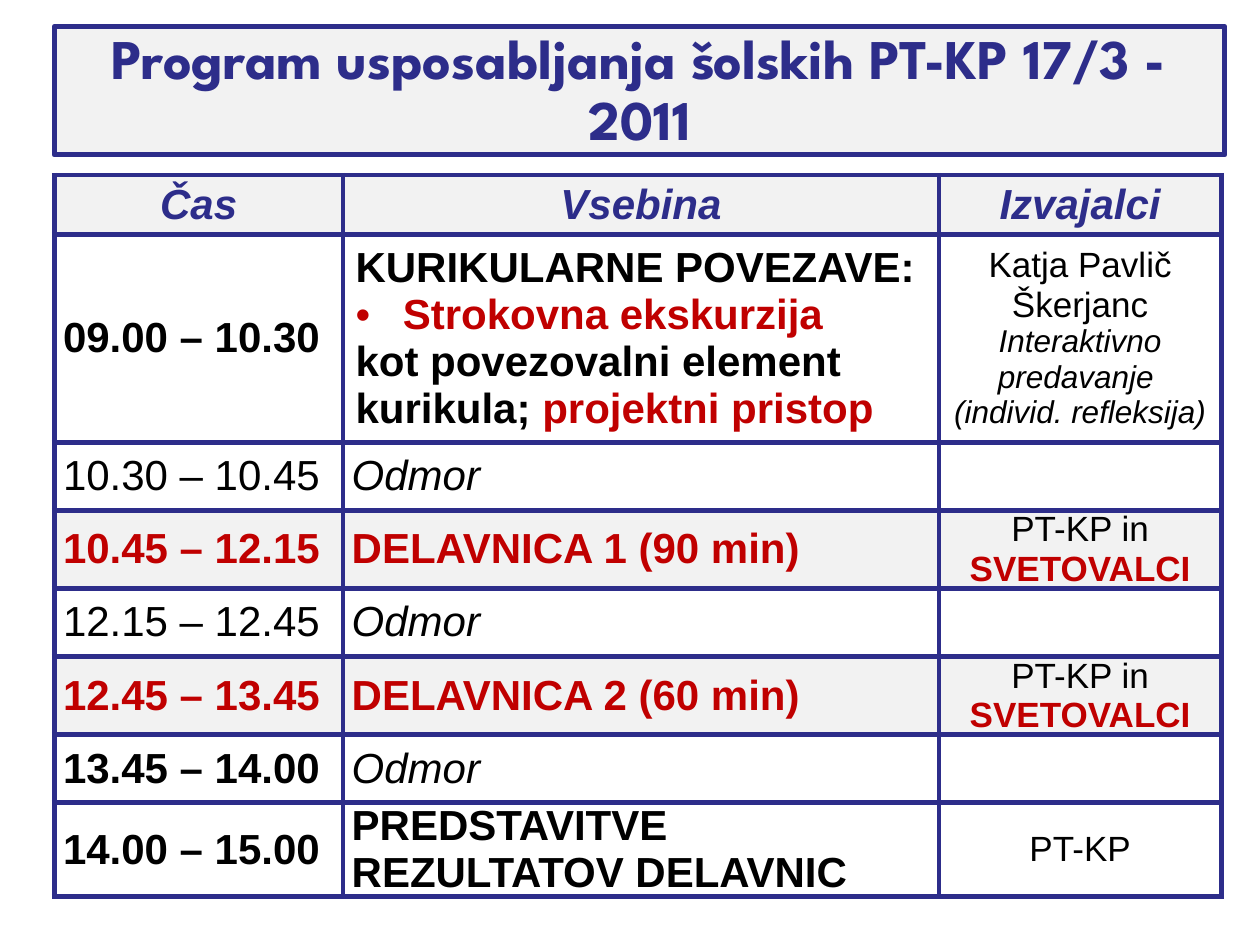
from dataclasses import dataclass
from typing import Any

from lxml.etree import SubElement as Sub
from pptx import Presentation
from pptx.dml.color import RGBColor as Rgb
from pptx.enum.shapes import MSO_SHAPE as Kind
from pptx.enum.text import MSO_ANCHOR as Anchor, PP_ALIGN as Align
from pptx.oxml import parse_xml as to_xml
from pptx.oxml.ns import nsdecls, qn
from pptx.util import Pt

NAVY, RED, BLACK = "2D2D8A", "C00000", "000000"
GREY, WHITE = "F2F2F2", "FFFFFF"


@dataclass
class Run:
    text: str
    size: float = 24
    color: str = BLACK
    bold: bool = False
    italic: bool = False
    name: str = "Arial"


@dataclass
class Para:
    runs: list[Run]
    align: Any = Align.LEFT
    dot: bool = False


@dataclass
class Cell:
    paras: list[Para]
    inset: float = 5


@dataclass
class Row:
    high: float
    cells: list[Cell]
    fill: str = WHITE


def paint(hue: str) -> Rgb:
    return Rgb.from_string(hue)


def add_runs(para: Any, runs: list[Run]) -> None:
    for item in runs:
        run = para.add_run()
        run.text = item.text
        form = {"size": Pt(item.size), "bold": item.bold,
                "italic": item.italic, "name": item.name}
        for key, value in form.items():
            setattr(run.font, key, value)
        run.font.color.rgb = paint(item.color)


def add_dot(para: Any) -> None:
    props = para._p.get_or_add_pPr()
    props.set("marL", str(Pt(27)))
    props.set("indent", str(-Pt(27)))
    Sub(props, qn("a:buFont"), typeface="Arial")
    Sub(props, qn("a:buChar"), char="•")


def add_edges(cell: Any) -> None:
    props = cell._tc.get_or_add_tcPr()
    for spot, side in enumerate("LRTB"):
        props.insert(spot, to_xml(
            f'<a:ln{side} {nsdecls("a")} w="{Pt(3)}"><a:solidFill>'
            f'<a:srgbClr val="{NAVY}"/></a:solidFill></a:ln{side}>'))


def fill_cell(cell: Any, data: Cell, hue: str) -> None:
    form = {"margin_left": Pt(data.inset), "margin_right": Pt(data.inset),
            "margin_top": Pt(0), "margin_bottom": Pt(0),
            "vertical_anchor": Anchor.MIDDLE}
    for key, value in form.items():
        setattr(cell, key, value)
    cell.fill.solid()
    cell.fill.fore_color.rgb = paint(hue)
    add_edges(cell)
    frame = cell.text_frame
    for spot, item in enumerate(data.paras):
        para = frame.add_paragraph() if spot else frame.paragraphs[0]
        para.alignment = item.align
        if item.dot:
            add_dot(para)
        add_runs(para, item.runs)


def add_title(slide: Any, text: str) -> None:
    box = slide.shapes.add_shape(Kind.RECTANGLE, Pt(31), Pt(15.1), Pt(668.9), Pt(73.4))
    box.shadow.inherit = False
    box.fill.solid()
    box.fill.fore_color.rgb = paint(GREY)
    box.line.color.rgb = paint(NAVY)
    box.line.width = Pt(3)
    frame = box.text_frame
    frame.word_wrap = True
    frame.vertical_anchor = Anchor.MIDDLE
    para = frame.paragraphs[0]
    para.alignment = Align.CENTER
    para.line_spacing = Pt(35)
    add_runs(para, [Run(text, 32, NAVY, True, name="League Spartan")])


def add_plan(slide: Any, rows: list[Row], wides: list[float]) -> None:
    high = sum(row.high for row in rows)
    grid = slide.shapes.add_table(len(rows), len(wides), Pt(31), Pt(100.1),
                                  Pt(sum(wides)), Pt(high)).table
    grid.first_row = grid.horz_banding = False
    for col, wide in zip(grid.columns, wides):
        col.width = Pt(wide)
    for spot, row in enumerate(rows):
        grid.rows[spot].height = Pt(row.high)
        for col, data in enumerate(row.cells):
            fill_cell(grid.cell(spot, col), data, row.fill)


def left(text: str, **form: Any) -> Cell:
    return Cell([Para([Run(text, **form)])])


def mid(*runs: Run) -> Para:
    return Para(list(runs), Align.CENTER)


def head(text: str) -> Cell:
    return Cell([mid(Run(text, 24, NAVY, True, True))])


def pause(time: str, bold: bool = False) -> Row:
    return Row(38.9, [left(time, bold=bold), left("Odmor", italic=True), Cell([])])


def work(time: str, text: str) -> Row:
    form = {"color": RED, "bold": True}
    staff = mid(Run("PT-KP in ", 20), Run("SVETOVALCI", 20, **form))
    return Row(38.9, [left(time, **form), left(text, **form), Cell([staff])], GREY)


def main() -> None:
    deck = Presentation()
    deck.slide_width, deck.slide_height = Pt(720), Pt(540)
    slide = deck.slides.add_slide(deck.slide_layouts[6])
    add_title(slide, "Program usposabljanja šolskih PT-KP 17/3 - 2011")
    topic = Cell([
        Para([Run("KURIKULARNE POVEZAVE:", bold=True)]),
        Para([Run("Strokovna ekskurzija", color=RED, bold=True)], dot=True),
        Para([Run("kot povezovalni element kurikula; ", bold=True),
              Run("projektni pristop", color=RED, bold=True)]),
    ], 7.2)
    host = Cell([
        mid(Run("Katja Pavlič Škerjanc", 20)),
        mid(Run("Interaktivno predavanje ", 18, italic=True)),
        mid(Run("(individ. refleksija)", 18, italic=True)),
    ])
    rows = [
        Row(33.8, [head(text) for text in ("Čas", "Vsebina", "Izvajalci")], GREY),
        Row(118.8, [left("09.00 – 10.30", bold=True), topic, host]),
        pause("10.30 – 10.45"),
        work("10.45 – 12.15", "DELAVNICA 1 (90 min)"),
        pause("12.15 – 12.45"),
        work("12.45 – 13.45", "DELAVNICA 2 (60 min)"),
        pause("13.45 – 14.00", True),
        Row(49, [left("14.00 – 15.00", bold=True),
                 left("PREDSTAVITVE REZULTATOV DELAVNIC", bold=True),
                 Cell([mid(Run("PT-KP", 20))])]),
    ]
    add_plan(slide, rows, [165, 340.6, 161.3])
    deck.save("out.pptx")


if __name__ == "__main__":
    main()
